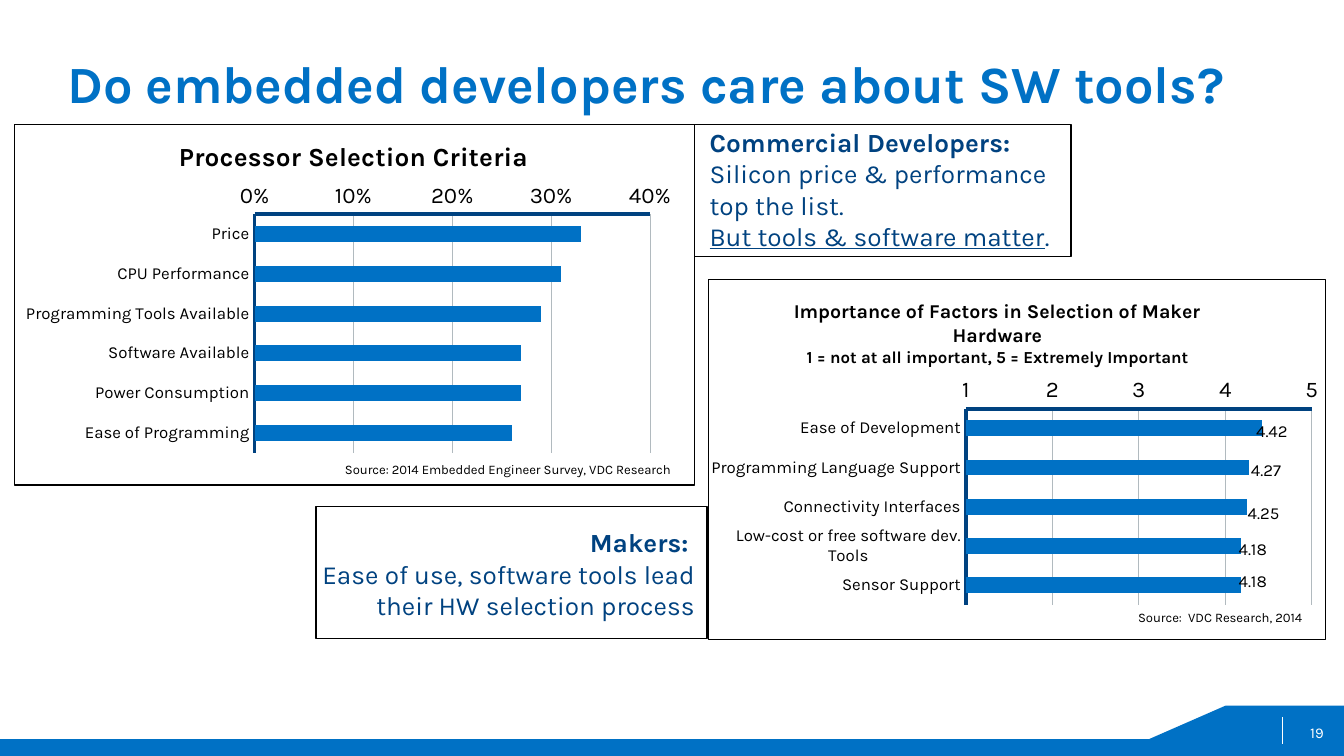
"""Build a slide on how embedded developers choose hardware and tools."""
from dataclasses import dataclass

import pptx
import pptx.chart.data
import pptx.dml.color
import pptx.enum.chart
import pptx.enum.shapes
import pptx.enum.text
import pptx.oxml
import pptx.oxml.ns
import pptx.util

Cm, Pt = pptx.util.Cm, pptx.util.Pt
qn = pptx.oxml.ns.qn
RIGHT = pptx.enum.text.PP_ALIGN.RIGHT
LEFT = pptx.enum.text.PP_ALIGN.LEFT
MIDDLE = pptx.enum.text.MSO_ANCHOR.MIDDLE


@dataclass(frozen=True)
class Theme:
    """Colours, font and type sizes of the slide."""
    font: str = "Karla"
    blue: str = "0071C5"
    navy: str = "004280"
    grid: str = "B1BABF"
    black: str = "000000"
    white: str = "FFFFFF"
    title: float = 28
    body: float = 14
    axis: float = 12
    subtitle: float = 10.5
    label: float = 9
    page: float = 8
    source: float = 7


T = Theme()


def rgb(color):
    """Return a colour object for a hex string."""
    return pptx.dml.color.RGBColor.from_string(color)


def set_font(font, size, color, bold=False, underline=False):
    """Apply the theme font with a size, colour and style."""
    font.name, font.size = T.font, Pt(size)
    font.bold, font.underline = bold, underline
    font.color.rgb = rgb(color)


def set_line(line, color, width):
    """Give a line its colour and width in points."""
    line.color.rgb = rgb(color)
    line.width = Pt(width)


def fill_text(tf, paragraphs, align=LEFT):
    """Write paragraphs, each a list of (text, size, color, bold, underline) runs."""
    for i, runs in enumerate(paragraphs):
        p = tf.paragraphs[0] if i == 0 else tf.add_paragraph()
        p.alignment = align
        for text, *style in runs:
            r = p.add_run()
            r.text = text
            set_font(r.font, *style)


def add_text(s, box, paragraphs, align=LEFT, wrap=True, inset=True):
    """Add a text box at a (left, top, width, height) box in centimetres."""
    tf = s.shapes.add_textbox(*map(Cm, box)).text_frame
    tf.word_wrap = wrap
    if not inset:
        clear_insets(tf)
    fill_text(tf, paragraphs, align)


def clear_insets(tf):
    """Remove the insets and centre the text vertically."""
    tf.margin_left = tf.margin_right = tf.margin_top = tf.margin_bottom = 0
    tf.vertical_anchor = MIDDLE


def add_title(s, text):
    """Place and format the title placeholder."""
    sp = s.shapes.title
    sp.left, sp.top, sp.width, sp.height = map(Cm, (1.27, 0.86, 22.86, 1.4))
    tf = sp.text_frame
    tf.auto_size = pptx.enum.text.MSO_AUTO_SIZE.NONE
    clear_insets(tf)
    fill_text(tf, [[(text, T.title, T.blue, True)]])


def add_frame(s, box):
    """Add an unfilled black frame."""
    sp = s.shapes.add_shape(pptx.enum.shapes.MSO_SHAPE.RECTANGLE, *map(Cm, box))
    sp.shadow.inherit = False
    sp.fill.background()
    set_line(sp.line, T.black, 0.75)


def add_footer(s, number):
    """Draw the footer band, its divider and the page number."""
    points = [(25.4, 13.34), (23.16, 13.34), (21.72, 13.97),
              (0, 13.97), (0, 14.29), (25.4, 14.29)]
    corners = [(Cm(x), Cm(y)) for x, y in points]
    builder = s.shapes.build_freeform(*corners[0])
    builder.add_line_segments(corners[1:], close=True)
    sp = builder.convert_to_shape()
    sp.shadow.inherit = False
    sp.fill.solid()
    sp.fill.fore_color.rgb = rgb(T.blue)
    sp.line.fill.background()
    line = s.shapes.add_connector(pptx.enum.shapes.MSO_CONNECTOR.STRAIGHT,
                                  *map(Cm, (24.23, 13.56, 24.23, 14.07)))
    set_line(line.line, T.white, 0.25)
    line._element.spPr.append(pptx.oxml.parse_xml(
        f'<a:effectLst {pptx.oxml.ns.nsdecls("a")}/>'))
    add_text(s, (19.1, 13.46, 5.92, 0.76), [[(number, T.page, T.white)]],
             RIGHT, inset=False)


def set_layout(parent, index, inner=False, **place):
    """Insert a manual chart layout, with fractions of the chart, at an index."""
    for old in parent.findall(qn("c:layout")):
        parent.remove(old)
    target = '<c:layoutTarget val="inner"/>' if inner else ""
    modes = "" if parent.tag == qn("c:dLbl") else (
        '<c:xMode val="edge"/><c:yMode val="edge"/>')
    values = "".join(f'<c:{k} val="{v}"/>' for k, v in place.items())
    parent.insert(index, pptx.oxml.parse_xml(
        f'<c:layout {pptx.oxml.ns.nsdecls("c")}><c:manualLayout>'
        f'{target}{modes}{values}</c:manualLayout></c:layout>'))


def format_axis(axis, size):
    """Style an axis line and its labels, without tick marks."""
    axis.major_tick_mark = pptx.enum.chart.XL_TICK_MARK.NONE
    axis.minor_tick_mark = pptx.enum.chart.XL_TICK_MARK.NONE
    set_line(axis.format.line, T.navy, 2)
    set_font(axis.tick_labels.font, size, T.black)


def add_bars(s, box, title, title_at, plot_at, data, scale, number_format):
    """Add a horizontal bar chart and return its series."""
    cd = pptx.chart.data.CategoryChartData()
    cd.categories = list(data)
    cd.add_series("Series 1", [value for value, *_ in data.values()])
    chart = s.shapes.add_chart(pptx.enum.chart.XL_CHART_TYPE.BAR_STACKED,
                               *map(Cm, box), cd).chart
    chart.has_legend = False
    set_font(chart.font, T.axis, T.black)
    fill_text(chart.chart_title.text_frame, title, None)
    root = chart._chartSpace.chart
    set_layout(root.find(qn("c:title")), 1, x=title_at[0], y=title_at[1])
    set_layout(root.plotArea, 0, inner=True, **dict(zip("xywh", plot_at)))

    format_axis(chart.category_axis, T.label)
    chart.category_axis.reverse_order = True
    axis = chart.value_axis
    format_axis(axis, T.axis)
    axis.minimum_scale, axis.maximum_scale, axis.major_unit = scale
    axis.tick_labels.number_format = number_format
    axis.tick_labels.number_format_is_linked = False
    set_line(axis.major_gridlines.format.line, T.grid, 0.5)

    plot = chart.plots[0]
    plot.gap_width, plot.overlap, plot.vary_by_categories = 150, 100, False
    series = plot.series[0]
    series.format.fill.solid()
    series.format.fill.fore_color.rgb = rgb(T.blue)
    return series


def add_labels(series, offsets):
    """Show each value, shifted from the bar end by a fraction of the chart."""
    for i, (dx, dy) in enumerate(offsets):
        label = series.points[i].data_label
        set_font(label.font, T.label, T.black)
        label.position = pptx.enum.chart.XL_LABEL_POSITION.INSIDE_END
        set_layout(label._dLbl, 1, x=dx, y=dy)


def main():
    """Build the slide and save it."""
    prs = pptx.Presentation()
    prs.slide_width, prs.slide_height = Cm(25.4), Cm(14.29)
    s = prs.slides.add_slide(prs.slide_layouts[5])
    add_footer(s, "19")
    add_title(s, "Do embedded developers care about SW tools?")

    body = (T.body, T.navy)
    add_text(s, (13.16, 2.26, 7.26, 2.64), [
        [("Commercial Developers: ", *body, True),
         ("Silicon price & performance top the list.", *body)],
        [("But tools & software matter", *body, False, True), (".", *body)]])
    add_text(s, (5.59, 9.83, 7.8, 2.06), [
        [("Makers: ", *body, True)],
        [("Ease of use, software tools lead their HW selection process", *body)]], RIGHT)

    criteria = {"Price": (0.33,), "CPU Performance": (0.31,),
                "Programming Tools Available": (0.29,), "Software Available": (0.27,),
                "Power Consumption": (0.27,), "Ease of Programming": (0.26,)}
    add_bars(s, (0.25, 2.16, 12.67, 6.53),
             [[("Processor Selection Criteria", T.body, T.black, True)]],
             (0.24, 0.06), (0.36, 0.29, 0.59, 0.69), criteria, (0, 0.4, 0.1), "0%")

    factors = {"Ease of Development": (4.42, 0.05, 0.01),
               "Programming Language Support": (4.27, 0.06, 0.01),
               "Connectivity Interfaces": (4.25, 0.06, 0.02),
               "Low-cost or free software dev. Tools": (4.18, 0.05, 0.01),
               "Sensor Support": (4.18, 0.05, -0.01)}
    series = add_bars(s, (13.26, 5.23, 11.89, 6.4), [
        [("Importance of Factors in Selection of Maker Hardware", T.subtitle, T.black, True)],
        [("1 = not at all important, 5 = Extremely Important", T.label, T.black, True)]],
        (0.14, 0.05), (0.42, 0.39, 0.55, 0.58), factors, (1, 5, 1), "0")
    add_labels(series, [offset for _, *offset in factors.values()])

    for text, box in (
            ("Source: 2014 Embedded Engineer Survey, VDC Research", (6.27, 8.59, 6.88, 0.56)),
            ("Source:  VDC Research, 2014", (21.26, 11.4, 3.76, 0.56))):
        add_text(s, box, [[(text, T.source, T.black)]], wrap=False)
    for box in ((0.28, 2.36, 12.85, 6.81), (13.39, 5.28, 11.66, 6.81),
                (13.13, 2.36, 7.11, 2.49), (5.97, 9.58, 7.39, 2.49)):
        add_frame(s, box)
    prs.save("out.pptx")


if __name__ == "__main__":
    main()
